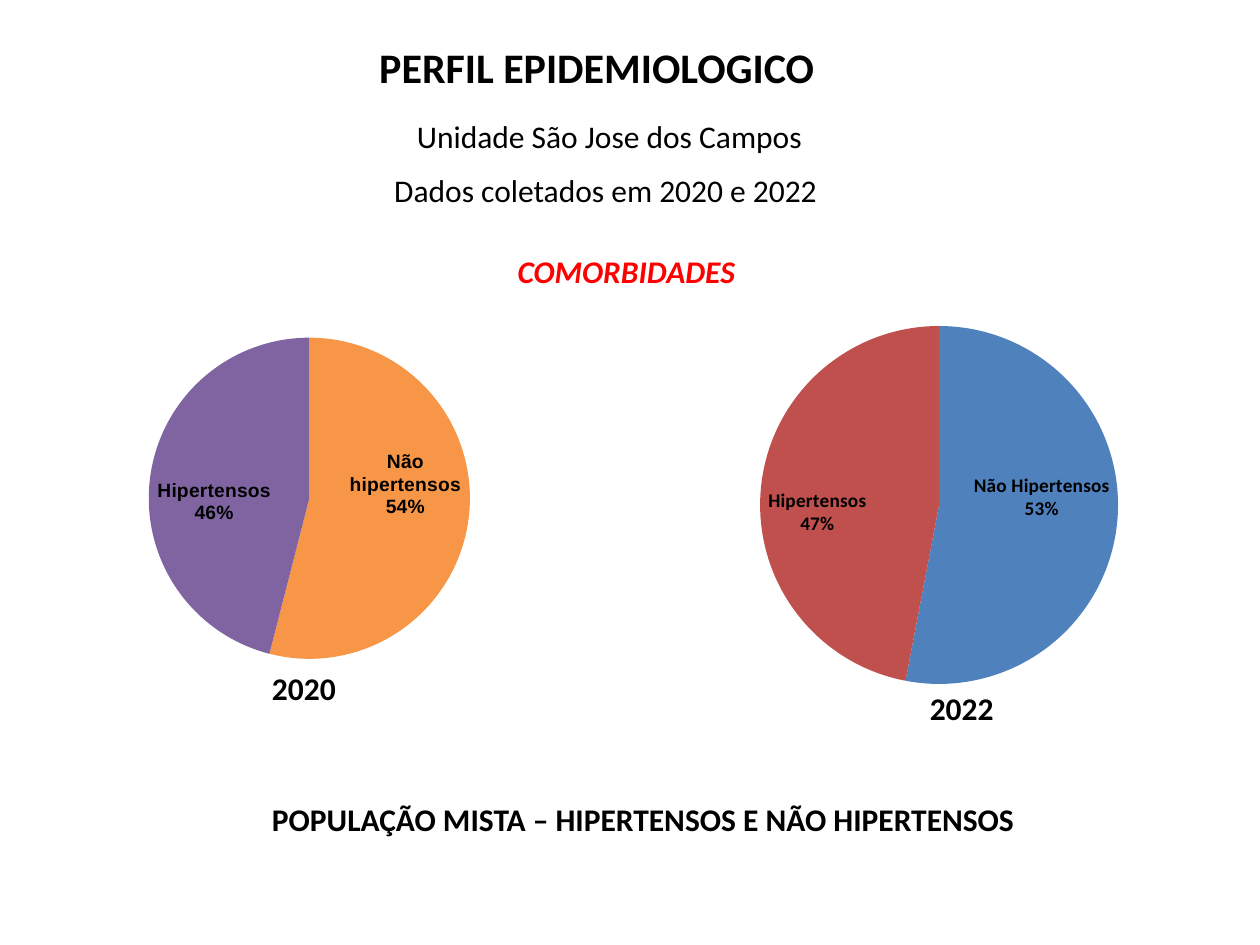
"""Build a slide with two pie charts comparing comorbidities in 2020 and 2022."""
from dataclasses import dataclass

from lxml.etree import SubElement
from pptx import Presentation
from pptx.chart.data import CategoryChartData
from pptx.dml.color import RGBColor
from pptx.enum.chart import XL_CHART_TYPE as ChartType, XL_LABEL_POSITION as LabelPos
from pptx.enum.text import MSO_ANCHOR as Anchor, MSO_AUTO_SIZE as AutoSize, PP_ALIGN as Align
from pptx.oxml.ns import qn
from pptx.util import Pt

FONT = "Calibri"


@dataclass
class Box:
    left: float
    top: float
    width: float
    height: float


@dataclass
class Label:
    text: str
    box: Box
    bold: bool = True
    italic: bool = False
    color: str = "000000"
    size: float = 18


@dataclass
class Pie:
    box: Box
    plot: Box
    categories: tuple[str, str]
    values: tuple[int, int]
    colors: tuple[str, str]
    label_font: str


TITLE = Label("PERFIL EPIDEMIOLOGICO", Box(209.5, 20.2, 265.7, 36), size=24)
LABELS = [
    Label("Unidade São Jose dos Campos", Box(231.1, 63.4, 236.2, 28.8), bold=False),
    Label("Dados coletados em 2020 e 2022", Box(218.2, 94.3, 259.2, 28.8), bold=False),
    Label("COMORBIDADES", Box(288.7, 140.4, 141.1, 28.8), italic=True, color="FF0000"),
    Label("2020", Box(148.3, 378.7, 51.1, 28.8)),
    Label("2022", Box(524.2, 390.2, 51.1, 28.8)),
    Label("POPULAÇÃO MISTA – HIPERTENSOS E NÃO HIPERTENSOS", Box(148.3, 453.6, 442.8, 28.8)),
]
PIES = [
    Pie(Box(-1.4, 175.7, 360, 216), Box(0.05, 0.08, 0.89, 0.85),
        ("Não hipertensos", "Hipertensos"), (54, 46), ("F79646", "8064A2"), "Arial"),
    Pie(Box(369.4, 177.8, 341.3, 213.1), Box(0, 0.04, 0.98, 0.96),
        ("Não Hipertensos", "Hipertensos"), (53, 47), ("4F81BD", "C0504D"), FONT),
]


def rgb(color: str) -> RGBColor:
    """Turn a hex string into a colour."""
    return RGBColor.from_string(color)


def points(box: Box) -> tuple[Pt, Pt, Pt, Pt]:
    """Give a box as four lengths."""
    return Pt(box.left), Pt(box.top), Pt(box.width), Pt(box.height)


def write(sp, label: Label) -> None:
    """Write one line of formatted text into a shape."""
    tf = sp.text_frame
    tf.word_wrap = False
    tf.auto_size = AutoSize.SHAPE_TO_FIT_TEXT
    tf.vertical_anchor = Anchor.TOP
    p = tf.paragraphs[0]
    p.alignment = Align.LEFT
    r = p.add_run()
    r.text = label.text
    r.font.name, r.font.size = FONT, Pt(label.size)
    r.font.bold, r.font.italic = label.bold, label.italic
    r.font.color.rgb = rgb(label.color)


def set_plot(chart, box: Box) -> None:
    """Place the inner plot area by fractions of the chart."""
    area = chart.plots[0]._element.getparent()
    layout = area.find(qn("c:layout"))
    if layout is None:
        layout = SubElement(area, qn("c:layout"))
        area.insert(0, layout)
    manual = SubElement(layout, qn("c:manualLayout"))
    settings = {"layoutTarget": "inner", "xMode": "edge", "yMode": "edge",
                "x": box.left, "y": box.top, "w": box.width, "h": box.height}
    for tag, value in settings.items():
        SubElement(manual, qn(f"c:{tag}")).set("val", str(value))


def add_pie(s, pie: Pie) -> None:
    """Add a pie chart with category and percentage labels."""
    data = CategoryChartData()
    data.categories = pie.categories
    data.add_series("Series 1", pie.values)
    chart = s.shapes.add_chart(ChartType.PIE, *points(pie.box), data).chart
    chart.has_title = chart.has_legend = False
    chart.font.name, chart.font.size = FONT, Pt(10)
    chart.font.color.rgb = rgb("000000")
    plot = chart.plots[0]
    plot.vary_by_categories = True
    for i, color in enumerate(pie.colors):
        fill = plot.series[0].points[i].format.fill
        fill.solid()
        fill.fore_color.rgb = rgb(color)
    labels = plot.series[0].data_labels
    labels.show_value = False
    labels.show_category_name = labels.show_percentage = True
    labels.position = LabelPos.INSIDE_END
    font = labels.font
    font.name, font.size, font.bold = pie.label_font, Pt(11), True
    font.color.rgb = rgb("000000")
    set_plot(chart, pie.box and pie.plot)


def main() -> None:
    """Build and save the slide."""
    prs = Presentation()
    prs.slide_width, prs.slide_height = Pt(720), Pt(540)
    s = prs.slides.add_slide(prs.slide_layouts[5])
    title = s.shapes.title
    title.left, title.top, title.width, title.height = points(TITLE.box)
    write(title, TITLE)
    for pie in PIES:
        add_pie(s, pie)
    for label in LABELS:
        write(s.shapes.add_textbox(*points(label.box)), label)
    prs.save("out.pptx")


if __name__ == "__main__":
    main()
